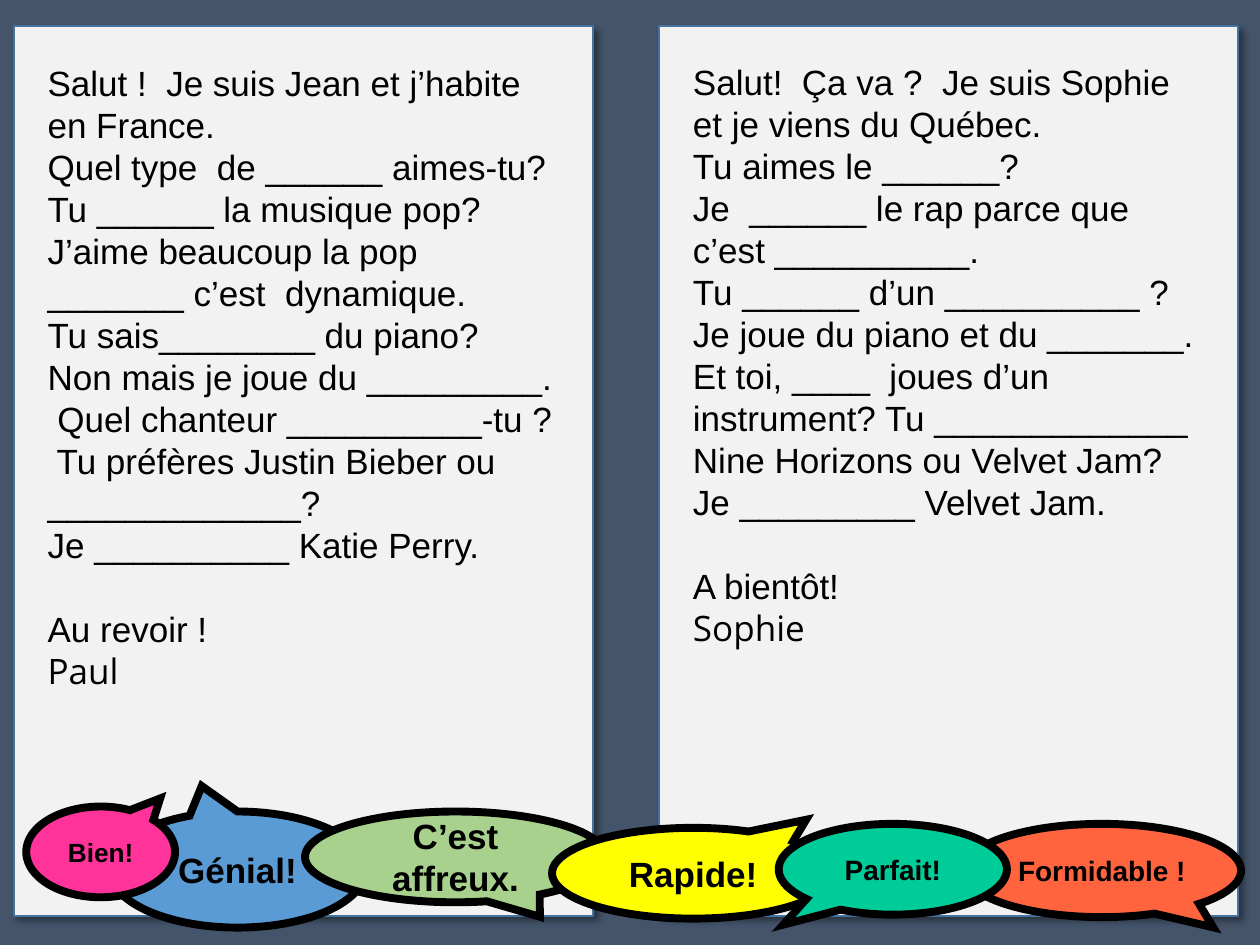
from lxml.etree import SubElement
from pptx import Presentation
from pptx.dml.color import RGBColor
from pptx.enum.shapes import MSO_SHAPE as Shape
from pptx.enum.text import MSO_ANCHOR as Anchor, PP_ALIGN as Align
from pptx.oxml.ns import qn
from pptx.util import Cm, Pt

HUES = {
    "back": "44546A", "page": "F2F2F2", "edge": "43739E", "ink": "000000",
    "blue": "5B9BD5", "pink": "FF3399", "green": "A9D18E",
    "yellow": "FFFF00", "orange": "FF643F", "teal": "00CC99",
}


def hue(name):
    return RGBColor.from_string(HUES[name])


def write(para, text, size, font="Arial", bold=False):
    """Add one run per line of text, with line breaks between."""
    for i, line in enumerate(text.split("\n")):
        if i:
            para.add_line_break()
        run = para.add_run()
        run.text = line
        run.font.size = Pt(size)
        run.font.name = font
        run.font.bold = bold
        run.font.color.rgb = hue("ink")


deck = Presentation()
deck.slide_width, deck.slide_height = Cm(25.4), Cm(19.05)
slide = deck.slides.add_slide(deck.slide_layouts[6])
slide.background.fill.solid()
slide.background.fill.fore_color.rgb = hue("back")
shapes = slide.shapes

# Two sheets of paper with a soft shadow
for left in (0.28, 13.28):
    sheet = shapes.add_shape(Shape.RECTANGLE, Cm(left), Cm(0.53), Cm(11.68), Cm(17.93))
    sheet.fill.solid()
    sheet.fill.fore_color.rgb = hue("page")
    sheet.line.color.rgb = hue("edge")
    sheet.line.width = Pt(1)
    sheet.shadow.inherit = False
    effects = sheet._element.spPr.find(qn("a:effectLst"))
    shade = SubElement(effects, qn("a:outerShdw"), blurRad=str(Pt(4)), dist=str(Pt(3)),
                       dir="2700000", algn="tl", rotWithShape="0")
    tint = SubElement(shade, qn("a:srgbClr"), val=HUES["ink"])
    SubElement(tint, qn("a:alpha"), val="40000")

# Letters: left, top, height, body, farewell, name
letters = [
    (0.71, 1.12, 13.08, [
        "Salut !  Je suis Jean et j’habite en France.",
        "Quel type  de ______ aimes-tu?  Tu ______ la musique pop?  "
        "J’aime beaucoup la pop _______ c’est  dynamique.",
        "Tu sais________ du piano?  Non mais je joue du _________.  "
        "Quel chanteur __________-tu ?  Tu préfères Justin Bieber ou _____________?\n"
        "Je __________ Katie Perry.",
    ], "Au revoir !", "Paul"),
    (13.72, 1.09, 12.22, [
        "Salut!  Ça va ?  Je suis Sophie et je viens du Québec.",
        "Tu aimes le ______?",
        "Je  ______ le rap parce que c’est __________.",
        "Tu ______ d’un __________ ? Je joue du piano et du _______.",
        "Et toi, ____  joues d’un instrument? Tu _____________ Nine Horizons ou Velvet Jam?\n"
        "Je _________ Velvet Jam.",
    ], "A bientôt!", "Sophie"),
]
for left, top, height, body, bye, name in letters:
    frame = shapes.add_textbox(Cm(left), Cm(top), Cm(10.82), Cm(height)).text_frame
    frame.word_wrap = True
    for i, text in enumerate([*body, bye, name]):
        para = frame.add_paragraph() if i else frame.paragraphs[0]
        para.line_spacing = Pt(24)
        if text == bye:
            para.space_before = Pt(24)
        write(para, text, 20, "Open Sans" if text == name else "Arial")

# Speech bubbles: text, size, colour, left, top, width, height, tip
bubbles = [
    ("Génial!", 20, "blue", 2.21, 16.36, 5.16, 2.34, (-0.14, -0.72)),
    ("Bien!", 15, "pink", 0.53, 16.26, 3, 1.83, (0.4, -0.59)),
    ("C’est affreux.", 20, "green", 6.15, 16.36, 6.07, 1.83, (0.28, 0.66)),
    ("Rapide!", 20, "yellow", 11.13, 16.69, 5.69, 1.83, (0.4, -0.59)),
    ("Formidable !", 16, "orange", 19.41, 16.61, 5.61, 1.88, (0.4, 0.61)),
    ("Parfait!", 16, "teal", 15.7, 16.61, 4.6, 1.83, (-0.48, 0.61)),
]
for text, size, fill, left, top, width, height, tip in bubbles:
    bubble = shapes.add_shape(Shape.OVAL_CALLOUT, Cm(left), Cm(top), Cm(width), Cm(height))
    bubble.adjustments[0], bubble.adjustments[1] = tip
    bubble.shadow.inherit = False
    bubble.fill.solid()
    bubble.fill.fore_color.rgb = hue(fill)
    bubble.line.color.rgb = hue("ink")
    bubble.line.width = Pt(4.5)
    SubElement(bubble._element.spPr.find(qn("a:ln")), qn("a:miter"), lim="800000")
    frame = bubble.text_frame
    frame.word_wrap = True
    frame.vertical_anchor = Anchor.MIDDLE
    frame.paragraphs[0].alignment = Align.CENTER
    write(frame.paragraphs[0], text, size, bold=True)

deck.save("out.pptx")
